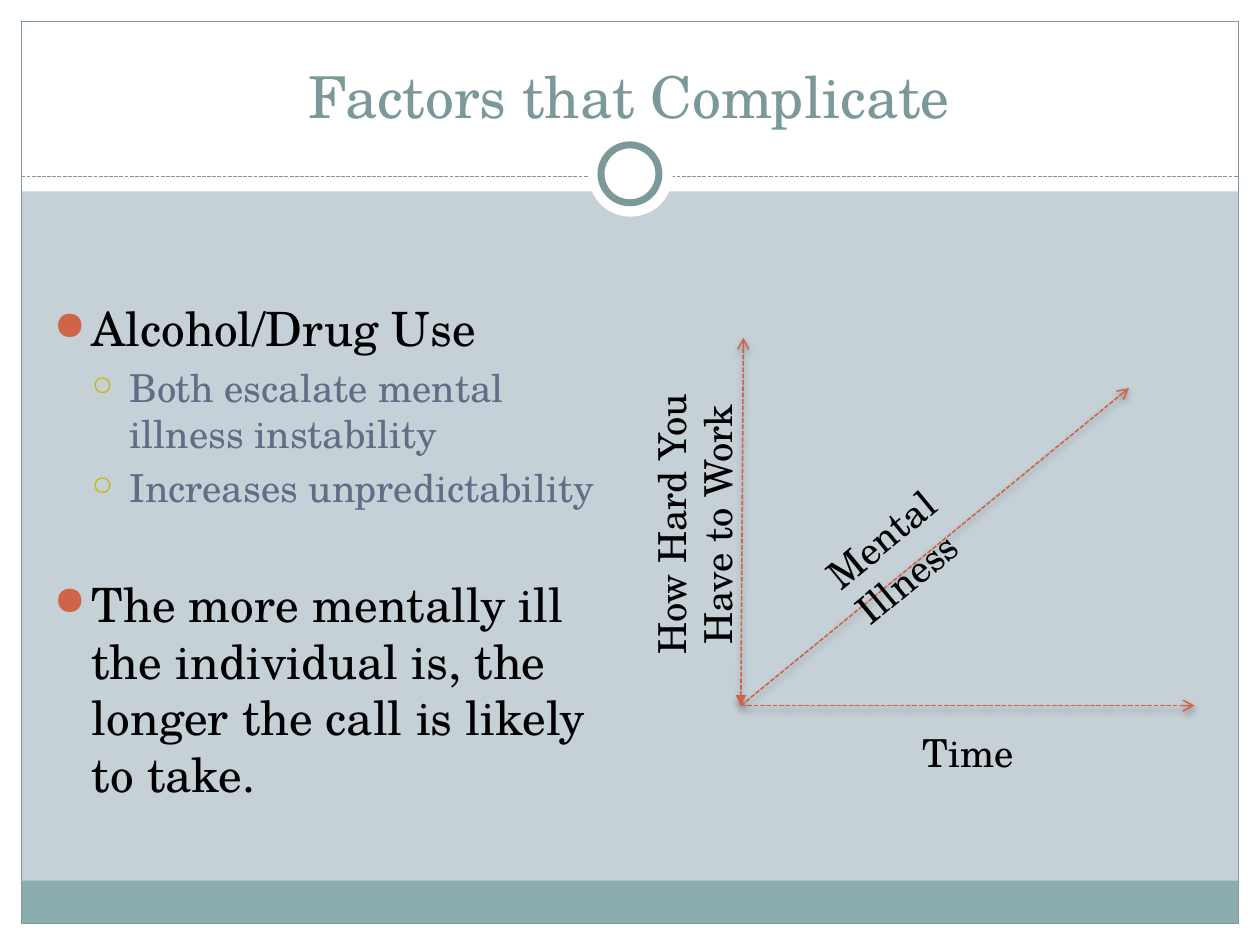
from lxml.etree import SubElement
from pptx import Presentation
from pptx.dml.color import RGBColor
from pptx.enum.dml import MSO_LINE
from pptx.enum.shapes import MSO_CONNECTOR, MSO_SHAPE
from pptx.enum.text import MSO_ANCHOR, MSO_AUTO_SIZE, PP_ALIGN
from pptx.oxml.ns import qn
from pptx.util import Inches, Pt

WIDE, HIGH, EDGE = 10, 7.5, 0.17
FONT = "TeX Gyre Schola"
HUES = {
    "back": "C5D1D7", "white": "FFFFFF", "teal": "7C999A", "band": "8CADAE",
    "red": "D16349", "gold": "CCB400", "slate": "646B86", "black": "000000",
}

TITLE = "Factors that Complicate"
# level, space before in points, text
POINTS = [
    (0, 5.4, "Alcohol/Drug Use"),
    (1, 4.4, "Both escalate mental illness instability"),
    (1, 4.4, "Increases unpredictability"),
    (0, 37, "The more mentally ill the individual is, "
            "the longer the call is likely to take."),
]
LEVELS = [
    {"size": 27, "hue": "black", "mark": "●", "tint": "red", "scale": 85},
    {"size": 22, "hue": "slate", "mark": "○", "tint": "gold", "scale": 70},
]
STEP = 0.3

ZERO = (5.88, 5.6)
# end point, arrowhead at the zero point
ARROWS = [((5.9, 2.68), "triangle"), ((9.48, 5.6), None), ((8.96, 3.08), None)]
# text, box, turn, alignment
LABELS = [
    ("How Hard You Have to Work", (4.05, 3.74, 2.93, 0.84), 270, PP_ALIGN.CENTER),
    ("Time", (7.07, 5.74, 1.23, 0.47), 0, PP_ALIGN.CENTER),
    ("Mental Illness", (6.28, 3.75, 2.13, 0.47), 320.5, PP_ALIGN.LEFT),
]

# shape, box, fill, line width
FRAME = [
    (MSO_SHAPE.RECTANGLE, (0, HIGH - EDGE, WIDE, EDGE), "white", 0),
    (MSO_SHAPE.RECTANGLE, (0, 0, WIDE, 1.52), "white", 0),
    (MSO_SHAPE.RECTANGLE, (0, 0, EDGE, HIGH), "white", 0),
    (MSO_SHAPE.RECTANGLE, (WIDE - EDGE, 0, EDGE, HIGH), "white", 0),
    (MSO_SHAPE.RECTANGLE, (EDGE, 6.99, WIDE - 2 * EDGE, 0.34), "band", 0),
    (MSO_SHAPE.RECTANGLE, (EDGE, EDGE, WIDE - 2 * EDGE, HIGH - 2 * EDGE), None, 0.75),
]
RINGS = [
    (MSO_SHAPE.OVAL, (4.67, 1.05, 0.67, 0.67), "white", 0),
    (MSO_SHAPE.OVAL, (4.77, 1.15, 0.46, 0.46), "white", 4),
]


def color(name):
    return RGBColor.from_string(HUES[name])


def inch(nums):
    return [Inches(n) for n in nums]


def add_part(slide, kind, box, fill, width):
    part = slide.shapes.add_shape(kind, *inch(box))
    part.shadow.inherit = False
    if fill:
        part.fill.solid()
        part.fill.fore_color.rgb = color(fill)
    else:
        part.fill.background()
    if width:
        part.line.color.rgb = color("teal")
        part.line.width = Pt(width)
    else:
        part.line.fill.background()


def add_line(slide, start, end, hue, width, head=None, tail=None, shade=False):
    line = slide.shapes.add_connector(
        MSO_CONNECTOR.STRAIGHT, *inch(start), *inch(end))
    line.line.color.rgb = color(hue)
    line.line.width = Pt(width)
    line.line.dash_style = MSO_LINE.SQUARE_DOT
    props = line._element.spPr
    for tag, kind in (("a:headEnd", head), ("a:tailEnd", tail)):
        if kind:
            SubElement(props.find(qn("a:ln")), qn(tag), type=kind)
    effect = SubElement(props, qn("a:effectLst"))
    if shade:
        cast = SubElement(effect, qn("a:outerShdw"), blurRad=str(Pt(4)),
                          dist=str(Pt(2)), dir="5400000", rotWithShape="0")
        tone = SubElement(cast, qn("a:srgbClr"), val=HUES["black"])
        SubElement(tone, qn("a:alpha"), val="35000")


def write(para, text, size=22, hue="black", align=PP_ALIGN.LEFT, before=0):
    para.alignment = align
    para.space_before = Pt(before)
    run = para.add_run()
    run.text = text
    run.font.name = FONT
    run.font.size = Pt(size)
    run.font.color.rgb = color(hue)


def add_bullet(para, level, mark, tint, scale):
    props = para._p.get_or_add_pPr()
    props.set("marL", str(Inches(STEP * (level + 1))))
    props.set("indent", str(-Inches(STEP)))
    props.set("lvl", str(level))
    SubElement(SubElement(props, qn("a:buClr")), qn("a:srgbClr"), val=HUES[tint])
    SubElement(props, qn("a:buSzPct"), val=str(scale * 1000))
    SubElement(props, qn("a:buChar"), char=mark)


def add_box(slide, box, fit=MSO_AUTO_SIZE.NONE):
    shape = slide.shapes.add_textbox(*inch(box))
    shape.text_frame.word_wrap = True
    shape.text_frame.auto_size = fit
    return shape


def add_title(slide):
    title = slide.shapes.title
    title.left, title.top, title.width, title.height = inch((0.33, 0.25, 9.33, 0.83))
    frame = title.text_frame
    frame.auto_size = MSO_AUTO_SIZE.NONE
    frame.vertical_anchor = MSO_ANCHOR.BOTTOM
    write(frame.paragraphs[0], TITLE, size=33, hue="teal", align=PP_ALIGN.CENTER)
    # bring the title in front of the frame
    slide.shapes._spTree.append(title._element)


def add_points(slide):
    frame = add_box(slide, (0.33, 2.33, 4.52, 3.96)).text_frame
    for i, (level, before, text) in enumerate(POINTS):
        para = frame.add_paragraph() if i else frame.paragraphs[0]
        look = LEVELS[level]
        write(para, text, size=look["size"], hue=look["hue"], before=before)
        add_bullet(para, level, look["mark"], look["tint"], look["scale"])


def main():
    deck = Presentation()
    deck.slide_width, deck.slide_height = inch((WIDE, HIGH))
    slide = deck.slides.add_slide(deck.slide_layouts[5])
    slide.background.fill.solid()
    slide.background.fill.fore_color.rgb = color("back")

    for part in FRAME:
        add_part(slide, *part)
    add_line(slide, (EDGE, 1.4), (WIDE - EDGE, 1.4), "teal", 0.75)
    for ring in RINGS:
        add_part(slide, *ring)

    add_title(slide)
    add_points(slide)
    for end, head in ARROWS:
        add_line(slide, ZERO, end, "red", 0.9, head=head, tail="arrow", shade=True)
    for text, box, turn, align in LABELS:
        label = add_box(slide, box, MSO_AUTO_SIZE.SHAPE_TO_FIT_TEXT)
        label.rotation = turn
        write(label.text_frame.paragraphs[0], text, align=align)

    deck.save("out.pptx")


if __name__ == "__main__":
    main()
